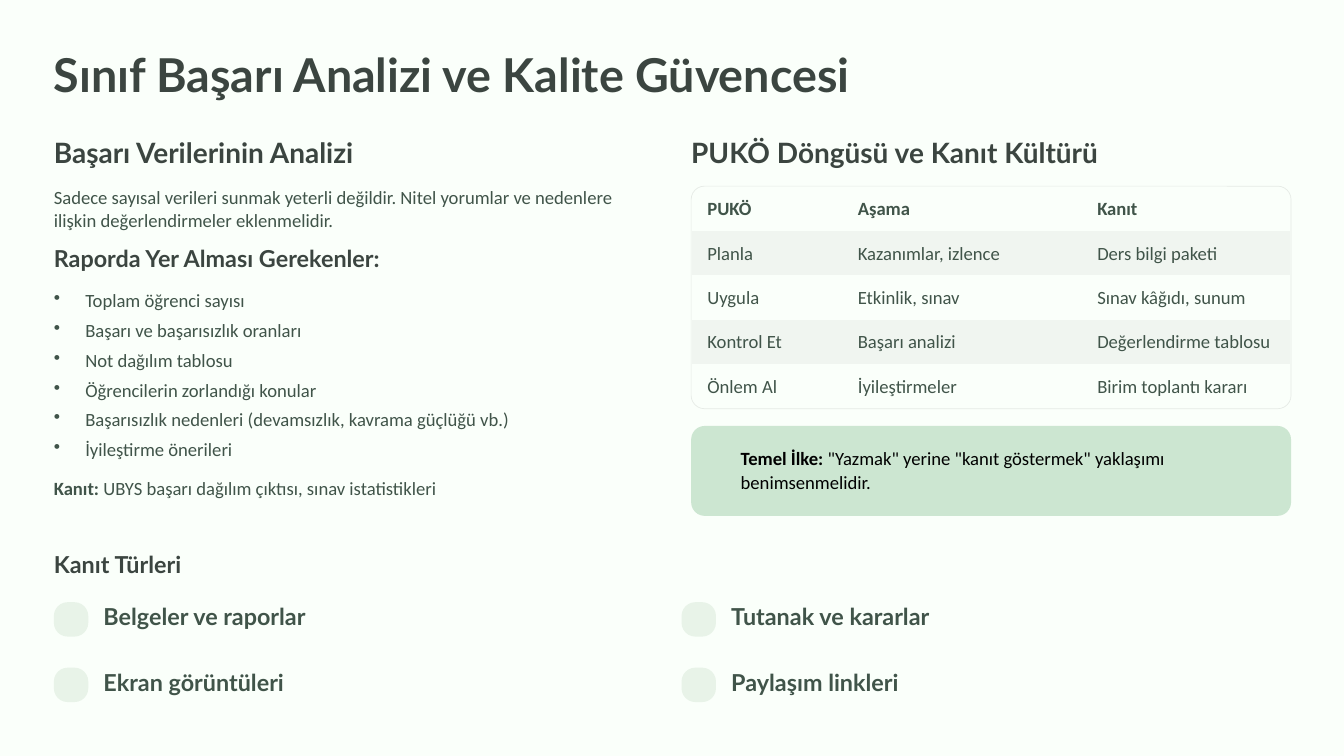
"""Builds the slide on class success analysis and quality assurance."""
from lxml.etree import SubElement
from pptx import Presentation
from pptx.dml.color import RGBColor
from pptx.enum.shapes import MSO_SHAPE
from pptx.enum.text import MSO_ANCHOR, MSO_AUTO_SIZE, PP_ALIGN
from pptx.oxml.ns import qn
from pptx.util import Cm, Pt

PAPER = RGBColor(0xFA, 0xFF, 0xFA)
HEADING = RGBColor(0x3B, 0x45, 0x40)
BODY = RGBColor(0x40, 0x54, 0x49)
BLACK = RGBColor(0x00, 0x00, 0x00)
BAND = RGBColor(0xF0, 0xF5, 0xF0)
FRAME = RGBColor(0xE6, 0xEB, 0xE6)
CALLOUT = RGBColor(0xCC, 0xE6, 0xD1)
TILE = RGBColor(0xE8, 0xF3, 0xE8)
NO_STYLE = "{2D5ABB26-0587-4C30-8999-92F81FD0307C}"

LEFT, RIGHT, COLUMN = 1.63, 20.9, 18.14
BULLETS = [
    "Toplam öğrenci sayısı",
    "Başarı ve başarısızlık oranları",
    "Not dağılım tablosu",
    "Öğrencilerin zorlandığı konular",
    "Başarısızlık nedenleri (devamsızlık, kavrama güçlüğü vb.)",
    "İyileştirme önerileri",
]
CYCLE = [
    ["PUKÖ", "Aşama", "Kanıt"],
    ["Planla", "Kazanımlar, izlence", "Ders bilgi paketi"],
    ["Uygula", "Etkinlik, sınav", "Sınav kâğıdı, sunum"],
    ["Kontrol Et", "Başarı analizi", "Değerlendirme tablosu"],
    ["Önlem Al", "İyileştirmeler", "Birim toplantı kararı"],
]
EVIDENCE = ["Belgeler ve raporlar", "Tutanak ve kararlar",
            "Ekran görüntüleri", "Paylaşım linkleri"]


class SlideBuilder:
    """Holds the text style and the current slide; lengths are in centimetres."""

    heading_font = "Lato"
    body_font = "Calibri"
    body_size = 16
    body_line = 20.5

    def __init__(self, prs):
        """Adds a title-only slide with the paper background."""
        self.s = prs.slides.add_slide(prs.slide_layouts[5])
        fill = self.s.background.fill
        fill.solid()
        fill.fore_color.rgb = PAPER

    def frame(self, tf, margins=(0, 0, 0, 0)):
        """Sets the margins, wrapping and anchor of a text frame."""
        tf.margin_left, tf.margin_top, tf.margin_right, tf.margin_bottom = map(Cm, margins)
        tf.word_wrap = True
        tf.auto_size = MSO_AUTO_SIZE.NONE
        tf.vertical_anchor = MSO_ANCHOR.TOP
        return tf

    def add_runs(self, p, runs, size=body_size, line=body_line, font=body_font, color=BODY):
        """Fills a paragraph with (text, bold) runs."""
        p.alignment = PP_ALIGN.LEFT
        p.line_spacing = Pt(line)
        p.space_before = Pt(0)
        for text, bold in runs:
            r = p.add_run()
            r.text = text
            r.font.name = font
            r.font.size = Pt(size)
            r.font.bold = bold
            r.font.color.rgb = color

    def box(self, x, y, w, h):
        """Adds a text box and returns its text frame."""
        return self.frame(self.s.shapes.add_textbox(Cm(x), Cm(y), Cm(w), Cm(h)).text_frame)

    def title(self, text):
        """Places and fills the title placeholder."""
        sp = self.s.shapes.title
        sp.left, sp.top, sp.width, sp.height = Cm(LEFT), Cm(1.65), Cm(36), Cm(1.45)
        p = self.frame(sp.text_frame).paragraphs[0]
        self.add_runs(p, [(text, True)], 40, 40.5, self.heading_font, HEADING)

    def heading(self, x, y, text, size=20, line=20, color=HEADING):
        """Adds a bold one-line heading."""
        p = self.box(x, y, 16, 0.87).paragraphs[0]
        self.add_runs(p, [(text, True)], size, line, self.heading_font, color)

    def body(self, x, y, h, runs):
        """Adds a body paragraph of column width."""
        self.add_runs(self.box(x, y, COLUMN, h).paragraphs[0], runs)

    def bullets(self, x, y, h, items):
        """Adds a bulleted list."""
        tf = self.box(x, y, COLUMN, h)
        for i, item in enumerate(items):
            p = tf.paragraphs[0] if i == 0 else tf.add_paragraph()
            pPr = p._p.get_or_add_pPr()
            pPr.set("marL", str(Cm(0.95)))
            pPr.set("indent", str(-Cm(0.95)))
            SubElement(pPr, qn("a:buChar")).set("char", "•")
            self.add_runs(p, [(item, False)])
            if i:
                p.space_before = Pt(5.1)

    def rounded(self, x, y, w, h, radius, fill=None, line=None):
        """Adds a rounded rectangle with an optional fill and line."""
        sp = self.s.shapes.add_shape(MSO_SHAPE.ROUNDED_RECTANGLE, Cm(x), Cm(y), Cm(w), Cm(h))
        sp.shadow.inherit = False
        sp.adjustments[0] = radius
        if fill is None:
            sp.fill.background()
        else:
            sp.fill.solid()
            sp.fill.fore_color.rgb = fill
        if line is None:
            sp.line.fill.background()
        else:
            sp.line.color.rgb = line
            sp.line.width = Pt(0.6)
        return sp

    def callout(self, x, y, w, h, runs):
        """Adds a filled panel with black text."""
        sp = self.rounded(x, y, w, h, 0.15, CALLOUT)
        tf = self.frame(sp.text_frame, (1.38, 0.46, 0.34, 0))
        self.add_runs(tf.paragraphs[0], runs, color=BLACK)

    def table(self, x, y, widths, row_height, rows):
        """Adds a table with a bold first row and a tint on every second row."""
        shape = self.s.shapes.add_table(len(rows), len(widths), Cm(x), Cm(y),
                                        Cm(sum(widths)), Cm(row_height * len(rows)))
        table = shape.table
        table._tbl.tblPr.find(qn("a:tableStyleId")).text = NO_STYLE
        table.horz_banding = False
        for column, width in zip(table.columns, widths):
            column.width = Cm(width)
        for i, values in enumerate(rows):
            table.rows[i].height = Cm(row_height)
            for cell, value in zip(table.rows[i].cells, values):
                cell.margin_left = Cm(0.46)
                cell.margin_right = cell.margin_top = cell.margin_bottom = Cm(0)
                cell.vertical_anchor = MSO_ANCHOR.MIDDLE
                if i % 2:
                    cell.fill.solid()
                    cell.fill.fore_color.rgb = BAND
                else:
                    cell.fill.background()
                self.add_runs(cell.text_frame.paragraphs[0], [(value, i == 0)])


def main():
    """Builds and saves the presentation."""
    prs = Presentation()
    prs.slide_width, prs.slide_height = Cm(40.64), Cm(22.86)
    s = SlideBuilder(prs)
    s.title("Sınıf Başarı Analizi ve Kalite Güvencesi")

    s.heading(LEFT, 4.24, "Başarı Verilerinin Analizi", 24, 24.5)
    s.body(LEFT, 5.56, 1.47, [("Sadece sayısal verileri sunmak yeterli değildir. Nitel yorumlar "
                               "ve nedenlere ilişkin değerlendirmeler eklenmelidir.", False)])
    s.heading(LEFT, 7.52, "Raporda Yer Alması Gerekenler:")
    s.bullets(LEFT, 8.69, 5.26, BULLETS)
    s.body(LEFT, 14.38, 0.74, [("Kanıt:", True),
                               (" UBYS başarı dağılım çıktısı, sınav istatistikleri", False)])

    s.heading(RIGHT, 4.24, "PUKÖ Döngüsü ve Kanıt Kültürü", 24, 24.5)
    s.rounded(RIGHT, 5.63, COLUMN, 6.73, 0.06, line=FRAME)
    s.table(20.93, 5.65, [4.55, 7.24, 6.3], 1.34, CYCLE)
    s.callout(RIGHT, 12.88, COLUMN, 2.72, [
        ("Temel İlke:", True),
        (' "Yazmak" yerine "kanıt göstermek" yaklaşımı benimsenmelidir.', False)])

    s.heading(LEFT, 16.79, "Kanıt Türleri")
    for i, label in enumerate(EVIDENCE):
        row, column = divmod(i, 2)
        x, y = LEFT + 18.98 * column, 18.21 + 1.98 * row
        s.rounded(x, y, 1.04, 1.04, 0.4, TILE)
        s.heading(x + 1.5, y + 0.15, label, color=BODY)

    prs.save("out.pptx")


if __name__ == "__main__":
    main()
